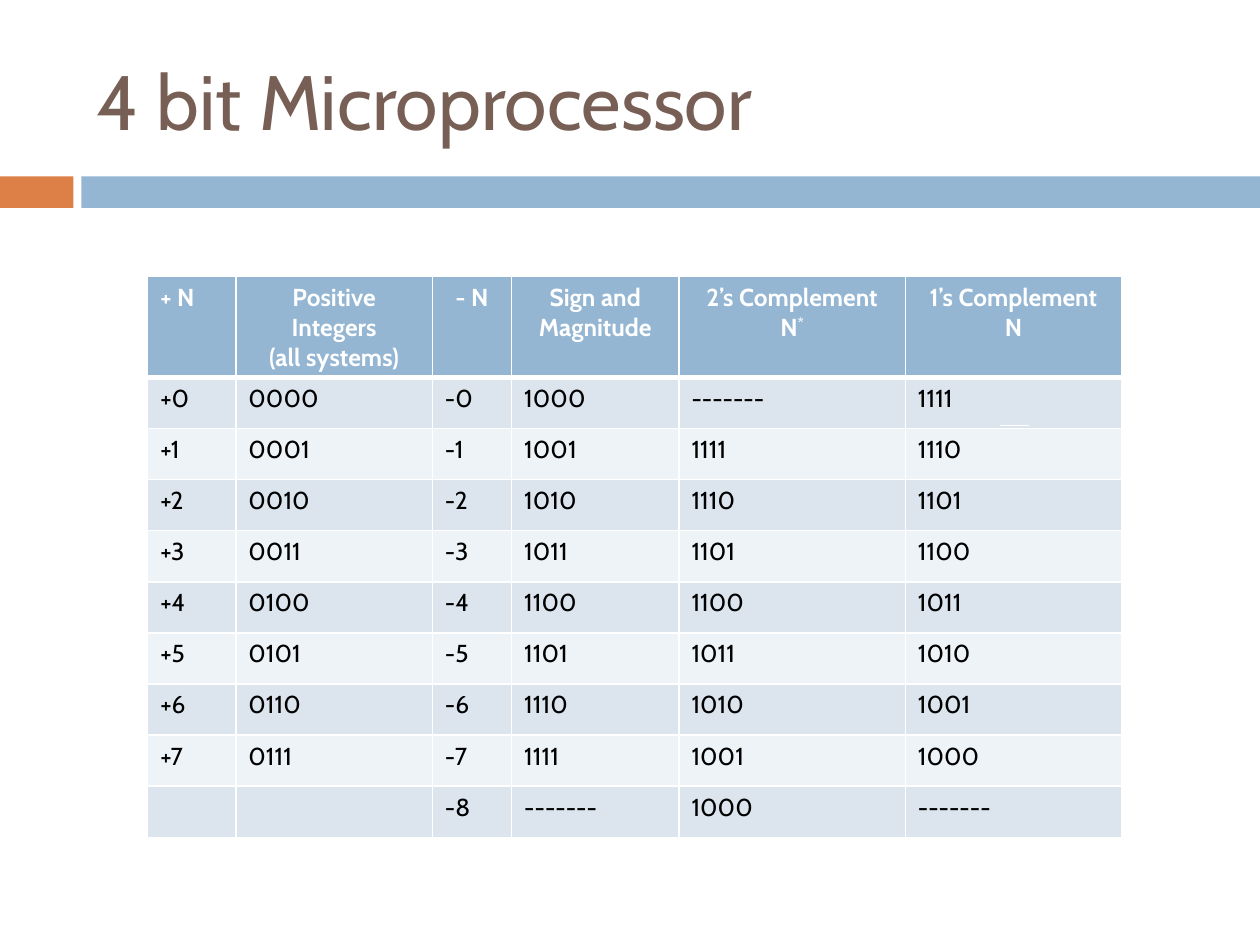
from lxml.etree import SubElement
from pptx import Presentation
from pptx.dml.color import RGBColor
from pptx.enum.shapes import MSO_CONNECTOR, MSO_SHAPE
from pptx.enum.text import MSO_ANCHOR, PP_ALIGN
from pptx.oxml.ns import qn
from pptx.util import Pt

WHITE = RGBColor(0xFF, 0xFF, 0xFF)
BLACK = RGBColor(0x00, 0x00, 0x00)
BROWN = RGBColor(0x77, 0x5F, 0x55)
ORANGE = RGBColor(0xDD, 0x80, 0x47)
BLUE = RGBColor(0x94, 0xB6, 0xD2)
BAND_DARK = RGBColor(0xDC, 0xE5, 0xEE)
BAND_LIGHT = RGBColor(0xEE, 0xF3, 0xF7)

DASHES = "-------"
COLUMN_WIDTHS = [50.4, 112.3, 45.3, 95.6, 129.4, 123.6]
ROW_HEIGHT = 29.2
HEADERS = ["+ N", "Positive Integers\n(all systems)", "- N",
           "Sign and Magnitude", "2’s Complement\nN", "1’s Complement\nN"]


def number_row(n):
    """Codes of +n and -n in four bits; dashes where no code exists."""
    positive = [f"+{n}", f"{n:04b}"] if n < 8 else ["", ""]
    return positive + [
        f"-{n}",
        f"{8 + n:04b}" if n < 8 else DASHES,
        f"{16 - n:04b}" if n > 0 else DASHES,
        f"{15 - n:04b}" if n < 8 else DASHES,
    ]


class SlideBuilder:
    font_name = "Cabin"
    table_size = 14

    def __init__(self, slide):
        self.slide = slide

    def style(self, paragraph, size, color, bold=False, align=PP_ALIGN.LEFT):
        paragraph.alignment = align
        font = paragraph.font
        font.name, font.size, font.bold = self.font_name, Pt(size), bold
        font.color.rgb = color

    def bar(self, left, top, width, height, color):
        shape = self.slide.shapes.add_shape(
            MSO_SHAPE.RECTANGLE, Pt(left), Pt(top), Pt(width), Pt(height))
        shape.shadow.inherit = False
        shape.fill.solid()
        shape.fill.fore_color.rgb = color
        shape.line.fill.background()

    def title(self, text, left, top, width, height):
        frame = self.slide.shapes.add_textbox(
            Pt(left), Pt(top), Pt(width), Pt(height)).text_frame
        frame.word_wrap = True
        frame.vertical_anchor = MSO_ANCHOR.MIDDLE
        frame.text = text
        self.style(frame.paragraphs[0], 44, BROWN)

    def line(self, x1, y1, x2, y2, color, width):
        connector = self.slide.shapes.add_connector(
            MSO_CONNECTOR.STRAIGHT, Pt(x1), Pt(y1), Pt(x2), Pt(y2))
        connector.line.color.rgb = color
        connector.line.width = Pt(width)
        SubElement(connector._element.spPr, qn("a:effectLst"))

    def borders(self, cell, top, bottom):
        properties = cell._tc.get_or_add_tcPr()
        for side, width in (("L", 1), ("R", 1), ("T", top), ("B", bottom)):
            border = SubElement(properties, qn(f"a:ln{side}"), w=str(Pt(width)))
            fill = SubElement(border, qn("a:solidFill"))
            SubElement(fill, qn("a:srgbClr"), val=str(WHITE))

    def table(self, rows, left, top, widths, row_height):
        table = self.slide.shapes.add_table(
            len(rows), len(widths), Pt(left), Pt(top),
            Pt(sum(widths)), Pt(row_height * len(rows))).table
        for column, width in zip(table.columns, widths):
            column.width = Pt(width)
        for r, values in enumerate(rows):
            table.rows[r].height = Pt(row_height)
            header = r == 0
            color = BLUE if header else BAND_DARK if r % 2 else BAND_LIGHT
            for c, value in enumerate(values):
                cell = table.cell(r, c)
                self.borders(cell, 3 if r == 1 else 1, 3 if header else 1)
                cell.fill.solid()
                cell.fill.fore_color.rgb = color
                cell.text = value
                align = PP_ALIGN.CENTER if header and c else PP_ALIGN.LEFT
                for paragraph in cell.text_frame.paragraphs:
                    self.style(paragraph, self.table_size,
                               WHITE if header else BLACK, header, align)
        return table

    def superscript(self, paragraph, text):
        run = paragraph.add_run()
        run.text = text
        run._r.get_or_add_rPr().set("baseline", "30000")


def main():
    presentation = Presentation()
    presentation.slide_width, presentation.slide_height = Pt(720), Pt(540)
    builder = SlideBuilder(
        presentation.slides.add_slide(presentation.slide_layouts[6]))

    # Title and the two-colour band below it
    builder.bar(0, 100.8, 42, 18, ORANGE)
    builder.bar(46.5, 100.8, 673.5, 18, BLUE)
    builder.title("4 bit Microprocessor", 48, 18, 642, 78)

    # Table of signed number codes
    rows = [HEADERS] + [number_row(n) for n in range(9)]
    table = builder.table(rows, 84.4, 158, COLUMN_WIDTHS, ROW_HEIGHT)
    builder.superscript(table.cell(0, 4).text_frame.paragraphs[1], "*")

    # Overbar
    builder.line(571.5, 243.2, 588, 243.2, WHITE, 0.79)

    presentation.save("out.pptx")


if __name__ == "__main__":
    main()
